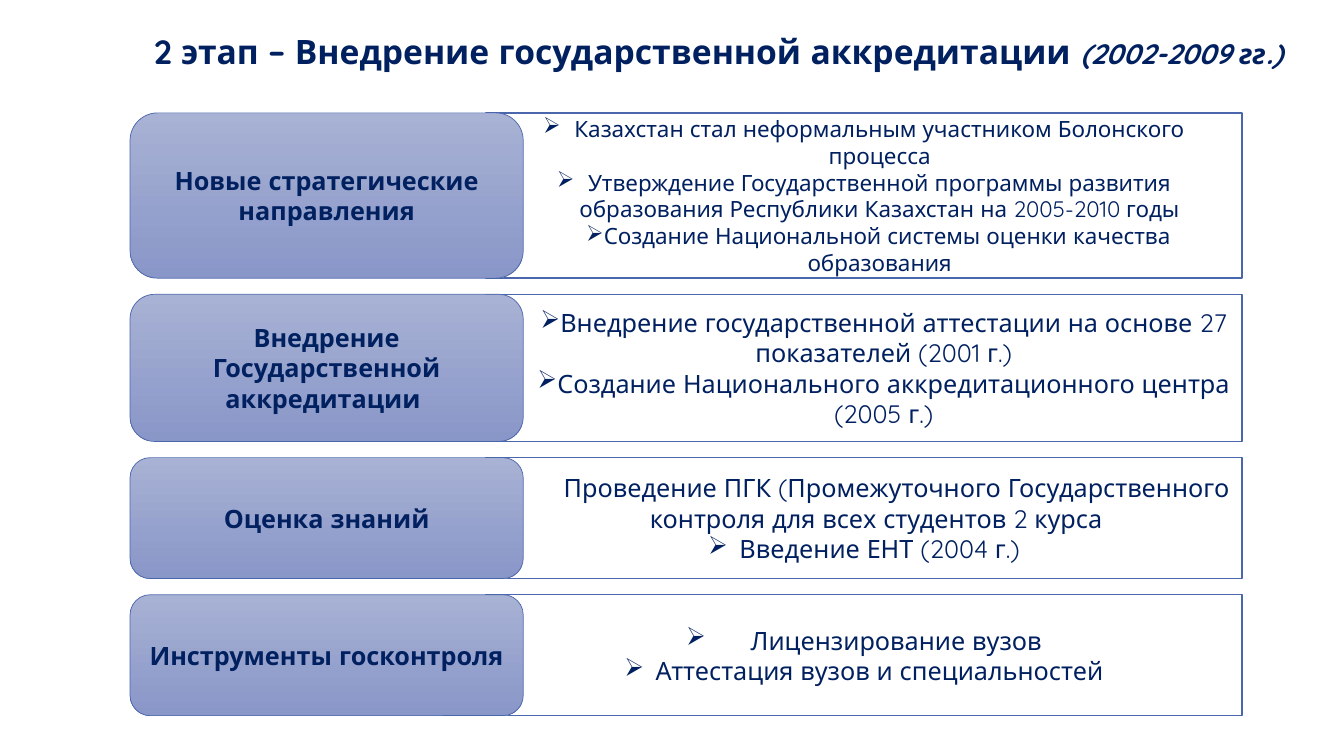
"""Build the slide on the second stage: introduction of state accreditation."""
import pptx
import pptx.dml.color
import pptx.enum.shapes
import pptx.enum.text
import pptx.oxml
import pptx.oxml.ns
import pptx.util
from pptx.util import Inches

COLORS = {
    "text": "002060",
    "line": "4A66AC",
    "panel": "FFFFFF",
    "label_top": "A8B2D4",
    "label_bottom": "8996C8",
}
FONT = "Quicksand"
BULLET = "➢"
LABEL_LEFT, LABEL_WIDTH = 1.29, 3.9
PANEL_LEFT, PANEL_WIDTH = 4.82, 7.5
FIRST_TOP, ROW_GAP = 1.12, 0.16

# Row: height, label, text size, points as (text, left margin, first-line indent, bullet)
ROWS = [
    (1.64, "Новые стратегические направления", 16, [
        ("Казахстан стал неформальным участником Болонского процесса", 0.31, -0.31, True),
        ("Утверждение Государственной программы развития образования "
         "Республики Казахстан на 2005-2010 годы", 0.31, -0.31, True),
        ("Создание Национальной системы оценки качества образования", 0.31, -0.02, True),
    ]),
    (1.46, "Внедрение Государственной аккредитации ", 18, [
        ("Внедрение государственной аттестации на основе 27 показателей (2001 г.)",
         0.39, 0, True),
        ("Создание Национального аккредитационного центра (2005 г.)", 0.39, 0, True),
    ]),
    (1.2, "Оценка знаний", 18, [
        ("Проведение ПГК (Промежуточного Государственного контроля "
         "для всех студентов 2 курса ", 0.31, 0.34, False),
        ("Введение ЕНТ (2004 г.)", 0.31, -0.31, True),
    ]),
    (1.2, "Инструменты госконтроля", 18, [
        ("Лицензирование вузов", 0.64, -0.64, True),
        ("Аттестация вузов и специальностей", 0.31, -0.31, True),
    ]),
]


def rgb(name):
    """Return the named colour."""
    return pptx.dml.color.RGBColor.from_string(COLORS[name])


def add_run(paragraph, text, size, bold=False, italic=False):
    """Add one styled run and centre its paragraph."""
    paragraph.alignment = pptx.enum.text.PP_ALIGN.CENTER
    run = paragraph.add_run()
    run.text = text
    run.font.name = FONT
    run.font.size = pptx.util.Pt(size)
    run.font.bold = bold
    run.font.italic = italic
    run.font.color.rgb = rgb("text")


def set_indent(paragraph, margin, indent, bullet):
    """Set the margin, first-line indent and bullet of a paragraph."""
    properties = paragraph._p.get_or_add_pPr()
    properties.set("marL", str(Inches(margin)))
    properties.set("indent", str(Inches(indent)))
    if bullet:
        character = pptx.oxml.parse_xml(
            f'<a:buChar {pptx.oxml.ns.nsdecls("a")} char="{BULLET}"/>')
        properties.append(character)


def add_box(slide, kind, left, top, width, height, line_width):
    """Add an outlined shape with vertically centred text."""
    shape = slide.shapes.add_shape(
        kind, Inches(left), Inches(top), Inches(width), Inches(height))
    shape.shadow.inherit = False
    shape.line.color.rgb = rgb("line")
    shape.line.width = pptx.util.Pt(line_width)
    shape.text_frame.word_wrap = True
    shape.text_frame.vertical_anchor = pptx.enum.text.MSO_ANCHOR.MIDDLE
    return shape


def add_panel(slide, top, height, size, points):
    """Add the white panel with its bulleted points."""
    shape = add_box(slide, pptx.enum.shapes.MSO_SHAPE.RECTANGLE,
                    PANEL_LEFT, top, PANEL_WIDTH, height, 1)
    shape.fill.solid()
    shape.fill.fore_color.rgb = rgb("panel")
    frame = shape.text_frame
    for index, (text, margin, indent, bullet) in enumerate(points):
        paragraph = frame.add_paragraph() if index else frame.paragraphs[0]
        add_run(paragraph, text, size)
        set_indent(paragraph, margin, indent, bullet)


def add_label(slide, top, height, text):
    """Add the rounded gradient label of a row."""
    shape = add_box(slide, pptx.enum.shapes.MSO_SHAPE.ROUNDED_RECTANGLE,
                    LABEL_LEFT, top, LABEL_WIDTH, height, 0.5)
    shape.fill.gradient()
    shape.fill.gradient_angle = 270
    for stop, name in zip(shape.fill.gradient_stops, ("label_top", "label_bottom")):
        stop.color.rgb = rgb(name)
    add_run(shape.text_frame.paragraphs[0], text, 18, bold=True)


def add_title(slide):
    """Add the title with the years in smaller italics."""
    box = slide.shapes.add_textbox(
        Inches(LABEL_LEFT), Inches(0.26), Inches(11.67), Inches(0.5))
    box.text_frame.word_wrap = True
    paragraph = box.text_frame.paragraphs[0]
    add_run(paragraph, "2 этап – Внедрение государственной аккредитации ", 24, bold=True)
    add_run(paragraph, "(2002-2009 гг.)", 20, bold=True, italic=True)


def main():
    """Build and save the presentation."""
    presentation = pptx.Presentation()
    presentation.slide_width = Inches(13.33)
    presentation.slide_height = Inches(7.5)
    slide = presentation.slides.add_slide(presentation.slide_layouts[6])
    top = FIRST_TOP
    for height, label, size, points in ROWS:
        add_panel(slide, top, height, size, points)
        add_label(slide, top, height, label)
        top += height + ROW_GAP
    add_title(slide)
    presentation.save("out.pptx")


if __name__ == "__main__":
    main()
